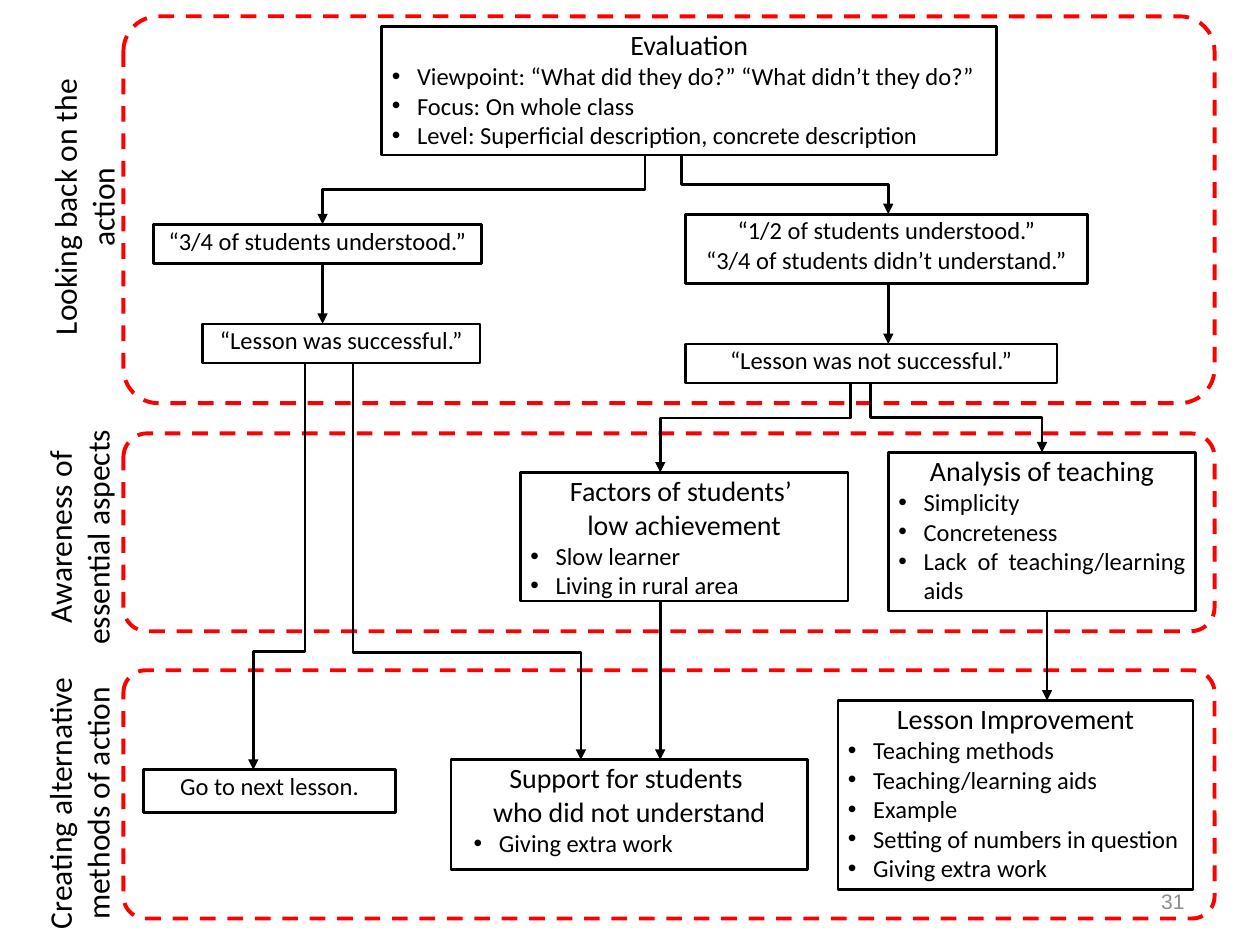
from lxml import etree
from pptx import Presentation
from pptx import util as u
from pptx.dml.color import RGBColor
from pptx.enum import dml, shapes, text
from pptx.oxml.ns import qn

BLACK, WHITE, RED, GREY = "000000", "FFFFFF", "FF0000", "8C8C8C"
CENTER, JUSTIFY, RIGHT = (text.PP_ALIGN.CENTER, text.PP_ALIGN.JUSTIFY,
                          text.PP_ALIGN.RIGHT)
FRAME = dict(margin_left=u.Inches(0.08), margin_right=u.Inches(0.08),
             margin_top=u.Inches(0.01), margin_bottom=u.Inches(0.01),
             word_wrap=True, vertical_anchor=text.MSO_ANCHOR.TOP)

# Stages: label, label place, band top, band height, corner ratio
STAGE_LEFT, STAGE_WIDTH = 0.98, 8.66
STAGES = [
    ("Looking back on the action", (0.28, 0.41, 0.71, 2.47), 0.13, 3.07, 0.09),
    ("Awareness of essential aspects", (0.24, 3.28, 0.74, 1.97), 3.44, 1.57, 0.12),
    ("Creating alternative methods of action", (0.24, 5.25, 0.74, 2.25), 5.32, 1.97, 0.09),
]

# Boxes: place, heading lines, heading size, bullets, bullet indent
BOXES = [
    ((3.03, 0.21, 4.88, 1.02), ["Evaluation"], 16,
     ["Viewpoint: “What did they do?” “What didn’t they do?”",
      "Focus: On whole class",
      "Level: Superficial description, concrete description"], 0.2),
    ((1.22, 1.78, 2.6, 0.31), ["“3/4 of students understood.”"], 14, [], 0),
    ((5.44, 1.7, 3.19, 0.55),
     ["“1/2 of students understood.”", "“3/4 of students didn’t understand.”"], 14, [], 0),
    ((1.61, 2.57, 2.2, 0.31), ["“Lesson was successful.”"], 14, [], 0),
    ((5.44, 2.73, 2.95, 0.31), ["“Lesson was not successful.”"], 14, [], 0),
    ((4.13, 3.75, 2.6, 1.02), ["Factors of students’ ", "low achievement"], 16,
     ["Slow learner", "Living in rural area"], 0.2),
    ((7.05, 3.59, 2.44, 1.26), ["Analysis of teaching"], 16,
     ["Simplicity", "Concreteness", "Lack of teaching/learning aids"], 0.2),
    ((1.14, 6.11, 2, 0.34), ["Go to next lesson."], 14, [], 0),
    ((3.58, 6.03, 2.83, 0.87), ["Support for students ", "who did not understand"], 16,
     ["Giving extra work"], 0.3),
    ((6.65, 5.56, 2.82, 1.5), ["Lesson Improvement"], 16,
     ["Teaching methods", "Teaching/learning aids", "Example",
      "Setting of numbers in question", "Giving extra work"], 0.2),
]

# Arrows: start x, start y, end x, end y, share of the drop before the bend
ARROWS = [
    (2.56, 2.1, 2.56, 2.57, 0), (7.05, 2.25, 7.05, 2.73, 0),
    (8.31, 4.85, 8.31, 5.56, 0), (5.24, 4.77, 5.24, 6.03, 0),
    (5.12, 1.23, 2.56, 1.78, 0.5), (5.41, 1.23, 7.05, 1.7, 0.5),
    (2.42, 2.88, 2.01, 6.11, 0.71), (2.8, 2.88, 4.61, 6.03, 0.73),
    (6.75, 3.04, 5.24, 3.75, 0.39), (6.91, 3.04, 8.27, 3.59, 0.5),
]


def rgb(value):
    return RGBColor.from_string(value)


def inches(values):
    return [u.Inches(value) for value in values]


def set_all(target, values):
    for name, value in values.items():
        setattr(target, name, value)


def add_line(frame, index, words, size, align=CENTER, color=BLACK, font="Calibri"):
    paragraph = frame.paragraphs[0] if index == 0 else frame.add_paragraph()
    paragraph.alignment = align
    run = paragraph.add_run()
    run.text = words
    set_all(run.font, dict(size=u.Pt(size), name=font))
    run.font.color.rgb = rgb(color)
    return paragraph


def add_bullet(paragraph, indent):
    hanging = min(indent, 0.2)
    paragraph.level = 1
    properties = paragraph._p.get_or_add_pPr()
    properties.set("marL", str(u.Inches(indent)))
    properties.set("indent", str(-u.Inches(hanging)))
    etree.SubElement(properties, qn("a:buFont")).set("typeface", "Arial")
    etree.SubElement(properties, qn("a:buChar")).set("char", "•")


def add_outline(slide, kind, place, color, width):
    shape = slide.shapes.add_shape(kind, *inches(place))
    shape.shadow.inherit = False
    shape.line.color.rgb = rgb(color)
    shape.line.width = u.Pt(width)
    return shape


def add_stage(slide, top, height, corner):
    band = add_outline(slide, shapes.MSO_SHAPE.ROUNDED_RECTANGLE,
                       (STAGE_LEFT, top, STAGE_WIDTH, height), RED, 2.25)
    band.fill.background()
    band.adjustments[0] = corner
    band.line.dash_style = dml.MSO_LINE.DASH


def add_label(slide, words, place):
    frame = slide.shapes.add_textbox(*inches(place)).text_frame
    set_all(frame, FRAME)
    frame._txBody.bodyPr.set("vert", "vert270")
    add_line(frame, 0, words, 18)


def add_box(slide, place, heading, size, bullets, indent):
    box = add_outline(slide, shapes.MSO_SHAPE.RECTANGLE, place, BLACK, 1.5)
    box.fill.solid()
    box.fill.fore_color.rgb = rgb(WHITE)
    set_all(box.text_frame, FRAME)
    for index, words in enumerate(heading):
        add_line(box.text_frame, index, words, size)
    for index, words in enumerate(bullets, len(heading)):
        add_bullet(add_line(box.text_frame, index, words, 14, JUSTIFY), indent)


def add_arrow(slide, x1, y1, x2, y2, bend):
    kind, ends = shapes.MSO_CONNECTOR.STRAIGHT, (x1, y1, x2, y2)
    if bend:
        # An elbow leaves sideways, so lay it out flat and turn it to leave downwards
        kind = shapes.MSO_CONNECTOR.ELBOW
        middle_x, middle_y = (x1 + x2) / 2, (y1 + y2) / 2
        half_width, half_height = (y2 - y1) / 2, abs(x2 - x1) / 2
        side = 1 if x2 > x1 else -1
        ends = (middle_x + side * half_width, middle_y - half_height,
                middle_x - side * half_width, middle_y + half_height)
    connector = slide.shapes.add_connector(kind, *inches(ends))
    connector.line.color.rgb = rgb(BLACK)
    connector.line.width = u.Pt(1.5)
    properties = connector._element.spPr
    if bend:
        degrees = 270 if x2 > x1 else 90
        properties.find(qn("a:xfrm")).set("rot", str(degrees * 60000))
        guides = properties.find(qn("a:prstGeom")).find(qn("a:avLst"))
        guide = etree.SubElement(guides, qn("a:gd"))
        guide.set("name", "adj1")
        guide.set("fmla", f"val {round(bend * 100000)}")
    line = properties.find(qn("a:ln"))
    etree.SubElement(line, qn("a:tailEnd")).set("type", "triangle")
    etree.SubElement(properties, qn("a:effectLst"))


def add_page_number(slide):
    frame = slide.shapes.add_textbox(*inches((7.17, 6.95, 2.33, 0.4))).text_frame
    set_all(frame, dict(word_wrap=True, vertical_anchor=text.MSO_ANCHOR.MIDDLE))
    add_line(frame, 0, "31", 12, RIGHT, GREY, "Arial")


def main():
    presentation = Presentation()
    set_all(presentation, dict(slide_width=u.Inches(10), slide_height=u.Inches(7.5)))
    slide = presentation.slides.add_slide(presentation.slide_layouts[6])
    add_page_number(slide)
    for label, place, *band in STAGES:
        add_stage(slide, *band)
        add_label(slide, label, place)
    for box in BOXES:
        add_box(slide, *box)
    for arrow in ARROWS:
        add_arrow(slide, *arrow)
    presentation.save("out.pptx")


if __name__ == "__main__":
    main()
